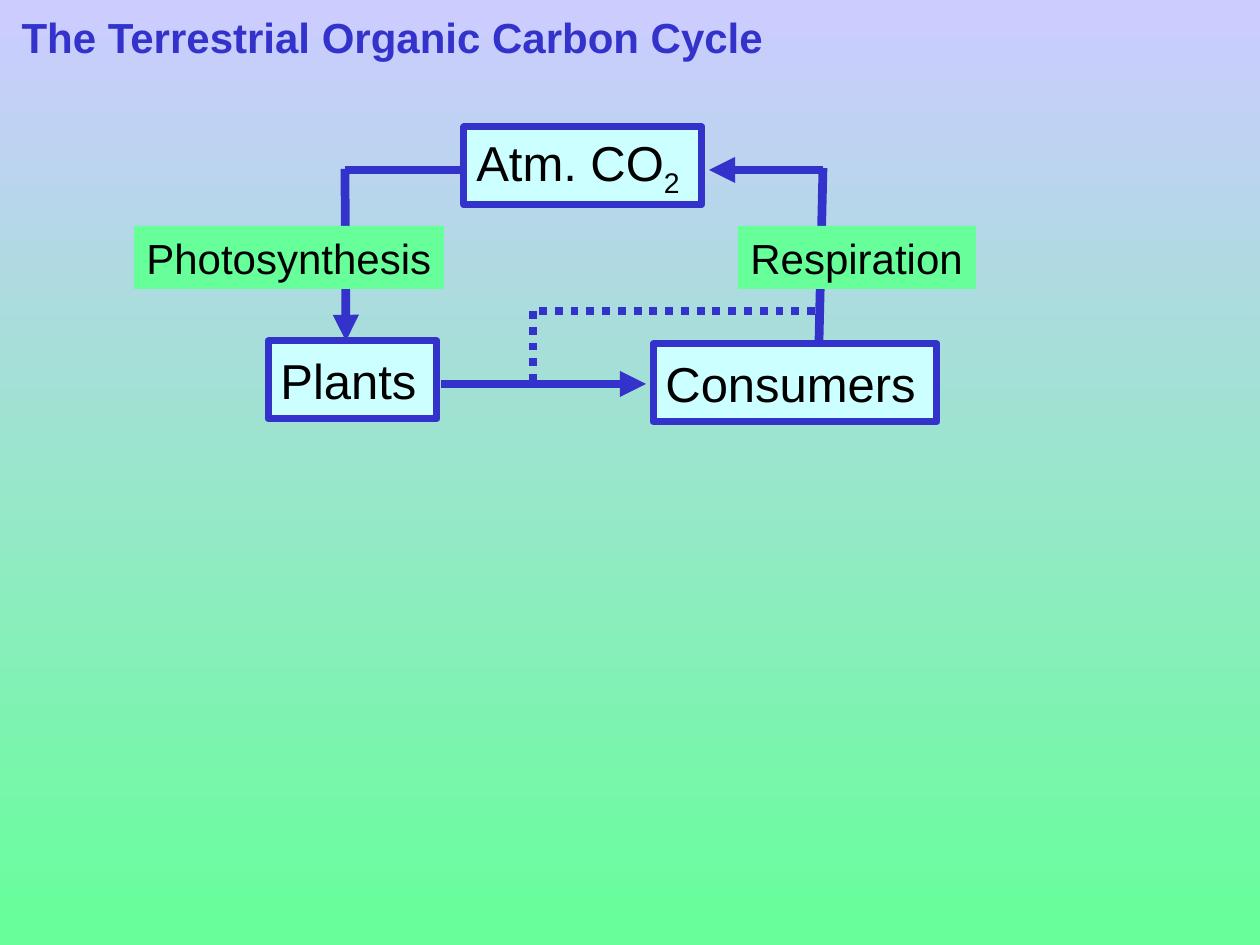
import pptx
import pptx.dml.color
import pptx.enum.dml
import pptx.enum.shapes
import pptx.enum.text
import pptx.oxml.ns
import pptx.util
from lxml import etree

SCALE = 914400 / 126
HUES = {"ink": "000000", "blue": "3333CC", "sky": "CCFFFF",
        "mint": "66FF99", "lilac": "CCCCFF"}


def emu(px):
    return pptx.util.Emu(round(px * SCALE))


def rgb(name):
    return pptx.dml.color.RGBColor.from_string(HUES[name])


def child(parent, tag, **attrs):
    return etree.SubElement(parent, pptx.oxml.ns.qn(tag), **attrs)


class Board:
    font = "Arial"

    def __init__(self, slide):
        self.slide = slide

    def ground(self, top, bottom):
        fill = self.slide.background.fill
        fill.gradient()
        fill.gradient_angle = 270
        for stop, name in zip(fill.gradient_stops, (top, bottom)):
            stop.color.rgb = rgb(name)

    def letter(self, shape, text, size, hue="ink", bold=False, sub=""):
        """Put one left-aligned line in a shape; sub is a trailing subscript."""
        frame = shape.text_frame
        frame.word_wrap = False
        frame.auto_size = pptx.enum.text.MSO_AUTO_SIZE.NONE
        frame.vertical_anchor = pptx.enum.text.MSO_ANCHOR.MIDDLE
        para = frame.paragraphs[0]
        para.alignment = pptx.enum.text.PP_ALIGN.LEFT
        para.add_run().text = text
        if sub:
            run = para.add_run()
            run.text = sub
            run.font._element.set("baseline", "-25000")
        para.font.name = self.font
        para.font.size = pptx.util.Pt(size)
        para.font.bold = bold
        para.font.color.rgb = rgb(hue)

    def title(self, text, x, y, w, h):
        shape = self.slide.shapes.title
        shape.left, shape.top, shape.width, shape.height = map(emu, (x, y, w, h))
        self.letter(shape, text, 24, "blue", True)

    def box(self, text, x, y, w, h, size, fill, edge=None, sub=""):
        shape = self.slide.shapes.add_shape(
            pptx.enum.shapes.MSO_SHAPE.RECTANGLE, *map(emu, (x, y, w, h)))
        shape.shadow.inherit = False
        shape.fill.solid()
        shape.fill.fore_color.rgb = rgb(fill)
        if edge:
            shape.line.color.rgb = rgb(edge)
            shape.line.width = pptx.util.Pt(4)
        else:
            shape.line.fill.background()
        self.letter(shape, text, size, sub=sub)

    def pool(self, text, x, y, w, sub=""):
        self.box(text, x, y, w, 78, 28, "sky", "blue", sub)

    def label(self, text, x, w):
        self.box(text, x, 226, w, 63, 24, "mint")

    def line(self, x1, y1, x2, y2, head=False, dots=False):
        link = self.slide.shapes.add_connector(
            pptx.enum.shapes.MSO_CONNECTOR.STRAIGHT, *map(emu, (x1, y1, x2, y2)))
        props = link._element.spPr
        child(props, "a:effectLst")
        link.line.color.rgb = rgb("blue")
        link.line.width = pptx.util.Pt(4.5 if dots else 5)
        if dots:
            link.line.dash_style = pptx.enum.dml.MSO_LINE.ROUND_DOT
        if head:
            child(props.find(pptx.oxml.ns.qn("a:ln")), "a:tailEnd", type="triangle")


def main():
    deck = pptx.Presentation()
    deck.slide_width, deck.slide_height = emu(1260), emu(945)
    board = Board(deck.slides.add_slide(deck.slide_layouts[5]))
    board.ground("lilac", "mint")
    board.title("The Terrestrial Organic Carbon Cycle", 9, 5, 770, 63)

    board.pool("Atm. CO", 464, 127, 238, sub="2")
    board.pool("Plants", 268, 341, 169)
    board.pool("Consumers", 653, 344, 284)

    board.line(460, 170, 345, 170)
    board.line(345, 169, 346, 341, head=True)
    board.line(441, 384, 646, 384, head=True)
    board.line(823, 170, 709, 170, head=True)
    board.line(823, 168, 819, 341)

    board.label("Photosynthesis", 134, 310)
    board.label("Respiration", 738, 238)

    board.line(533, 382, 533, 309, dots=True)
    board.line(539, 311, 818, 311, dots=True)
    deck.save("out.pptx")


if __name__ == "__main__":
    main()
